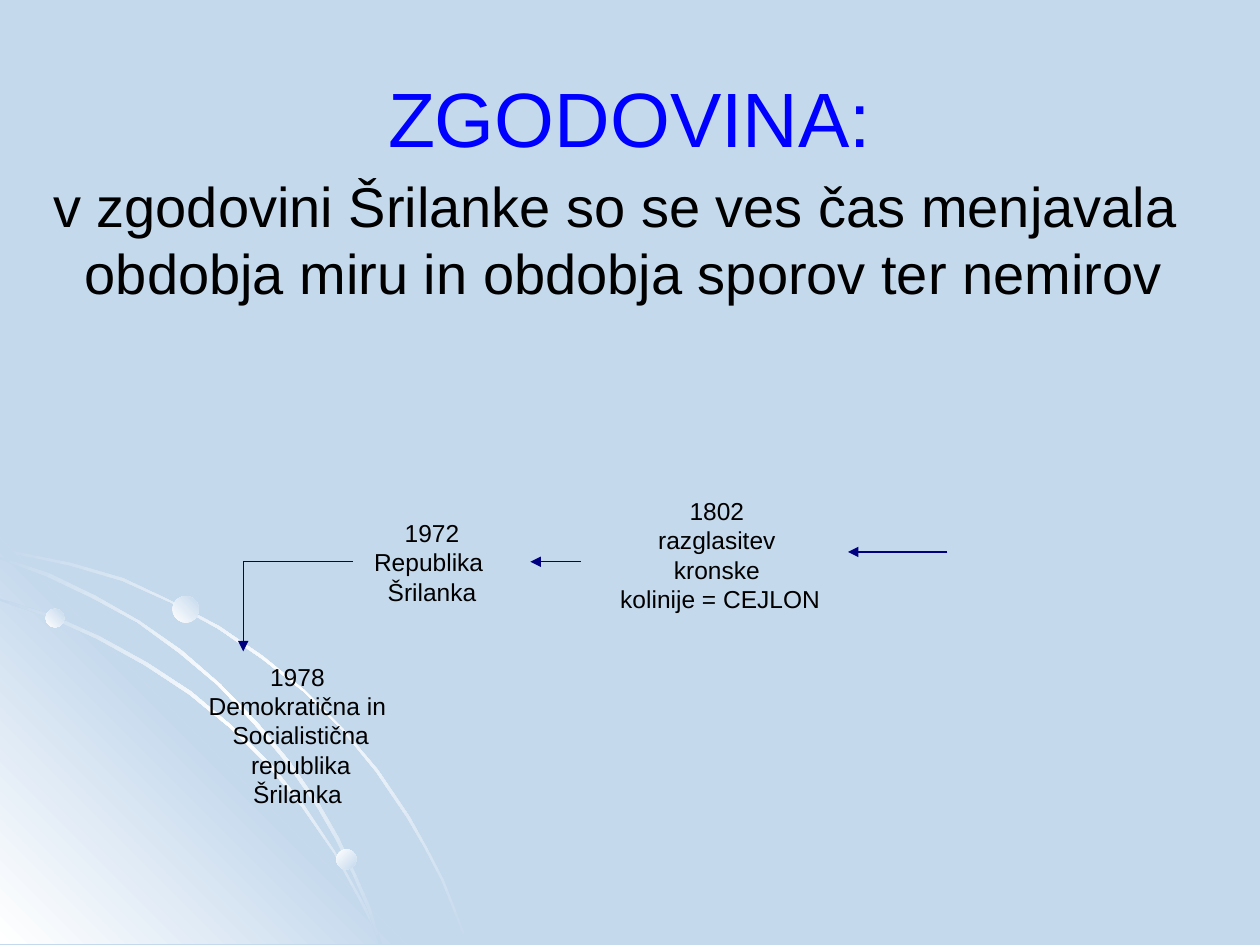
from lxml.etree import SubElement
from pptx import Presentation
from pptx.dml.color import RGBColor
from pptx.enum.shapes import MSO_CONNECTOR, MSO_SHAPE
from pptx.enum.text import MSO_ANCHOR, PP_ALIGN
from pptx.oxml.ns import qn
from pptx.util import Pt

HUE = {"sky": "C5D9ED", "white": "FFFFFF", "title": "0000FF",
       "text": "000000", "line": "000080"}

GLOW = [(0, "sky"), (50, "white"), (100, "sky")]
FADE = [(0, "white"), (50, "sky"), (100, "white")]
BALL = [(0, "white"), (100, "sky")]

UNIT = Pt(0.72)
OUTER = [(57, 447), (28, 441), (0, 435), (0, 438), (28, 443), (56, 449),
         (97, 461), (135, 478), (173, 499), (208, 523), (241, 549),
         (271, 579), (298, 612), (323, 649), (337, 673), (350, 698),
         (360, 723), (370, 749), (372, 749), (362, 723), (352, 698),
         (339, 673), (325, 648), (300, 611), (272, 578), (242, 548),
         (209, 521), (174, 497), (136, 477), (98, 459)]
CORNER = [(322, 749), (0, 749), (0, 427)]
INNER = [(285, 714), (294, 732), (301, 749), (303, 749), (296, 730),
         (286, 712), (266, 676), (242, 640), (215, 606), (184, 576),
         (152, 549), (117, 526), (79, 505), (41, 488), (0, 475), (0, 477),
         (39, 490), (77, 507), (115, 528), (150, 551), (183, 578),
         (213, 608), (240, 641), (265, 677)]
MIDDLE = [(0, 442), (0, 444), (36, 457), (74, 475), (109, 494), (142, 518),
          (173, 544), (202, 575), (227, 605), (252, 641), (267, 667),
          (280, 694), (292, 722), (301, 749), (303, 749), (294, 720),
          (282, 693), (269, 665), (254, 639), (229, 603), (204, 573),
          (175, 543), (144, 516), (111, 493), (76, 473), (39, 455)]


def tint(name):
    return RGBColor.from_string(HUE[name])


def blend(shape, stops, angle):
    shape.shadow.inherit = False
    shape.line.fill.background()
    shape.fill.gradient()
    shape.fill.gradient_angle = 360 - angle
    items = shape._element.spPr.find(qn("a:gradFill")).find(qn("a:gsLst"))
    for old in list(items):
        items.remove(old)
    for place, name in stops:
        stop = SubElement(items, qn("a:gs"), pos=str(place * 1000))
        SubElement(stop, qn("a:srgbClr"), val=HUE[name])


def draw_curve(slide, dots, stops, angle):
    pen = slide.shapes.build_freeform(*dots[0], scale=UNIT)
    pen.add_line_segments(dots[1:], close=True)
    blend(pen.convert_to_shape(), stops, angle)


def draw_ball(slide, left, top, size, angle):
    box = map(Pt, (left, top, size, size))
    blend(slide.shapes.add_shape(MSO_SHAPE.OVAL, *box), BALL, angle)


def add_text(slide, box, lines, size, color="text",
             align=PP_ALIGN.CENTER, anchor=MSO_ANCHOR.MIDDLE, indent=0):
    frame = slide.shapes.add_textbox(*map(Pt, box)).text_frame
    look = {"word_wrap": True, "vertical_anchor": anchor}
    for key, value in look.items():
        setattr(frame, key, value)
    frame.text = "\n".join(lines)
    style = {"name": "Arial", "size": Pt(size)}
    for para in frame.paragraphs:
        para.alignment = align
        if indent:
            props = para._p.get_or_add_pPr()
            props.set("marL", str(Pt(indent)))
            props.set("indent", str(Pt(-indent)))
        font = para.runs[0].font
        for key, value in style.items():
            setattr(font, key, value)
        font.color.rgb = tint(color)


def add_line(slide, start, end, head=True):
    link = slide.shapes.add_connector(
        MSO_CONNECTOR.STRAIGHT, *map(Pt, start + end))
    link.line.width = Pt(0.75)
    link.line.color.rgb = tint("line")
    if head:
        SubElement(link.line._get_or_add_ln(), qn("a:tailEnd"),
                   type="triangle")
    SubElement(link._element.spPr, qn("a:effectLst"))


def main():
    deck = Presentation()
    deck.slide_width, deck.slide_height = Pt(720), Pt(540)
    slide = deck.slides.add_slide(deck.slide_layouts[6])
    back = slide.background.fill
    back.solid()
    back.fore_color.rgb = tint("sky")

    draw_curve(slide, OUTER, GLOW, 45)
    draw_curve(slide, CORNER, FADE, 315)
    draw_curve(slide, INNER, GLOW, 45)
    draw_curve(slide, MIDDLE, GLOW, 45)
    for ball in [(26, 347.8, 10.8, 315), (192.2, 485.3, 11.5, 45),
                 (98.6, 340.6, 15.1, 315)]:
        draw_ball(slide, *ball)

    add_text(slide, (36, 21.6, 648, 90), ["ZGODOVINA:"], 44, "title")
    add_text(slide, (14.4, 94.3, 669.6, 430.6),
             [" v zgodovini Šrilanke so se ves čas menjavala "
              "obdobja miru in obdobja sporov ter nemirov"],
             32, align=PP_ALIGN.LEFT, anchor=MSO_ANCHOR.TOP, indent=27)

    events = [
        ((342.7, 281, 133.9, 72),
         ["1802", "razglasitev kronske", " kolinije = CEJLON"]),
        ((206.6, 292.3, 80.6, 57.6), ["1972", "Republika ", "Šrilanka"]),
        ((106, 383, 128, 74.2),
         ["1978", "Demokratična in", " Socialistična",
          " republika Šrilanka"]),
    ]
    for box, lines in events:
        add_text(slide, box, lines, 14)

    add_line(slide, (541.4, 315.4), (484.6, 315.4))
    add_line(slide, (331.9, 321), (303.1, 321))
    add_line(slide, (139, 321), (139, 372.2))
    add_line(slide, (201.6, 321), (139, 321), head=False)
    deck.save("out.pptx")


if __name__ == "__main__":
    main()
